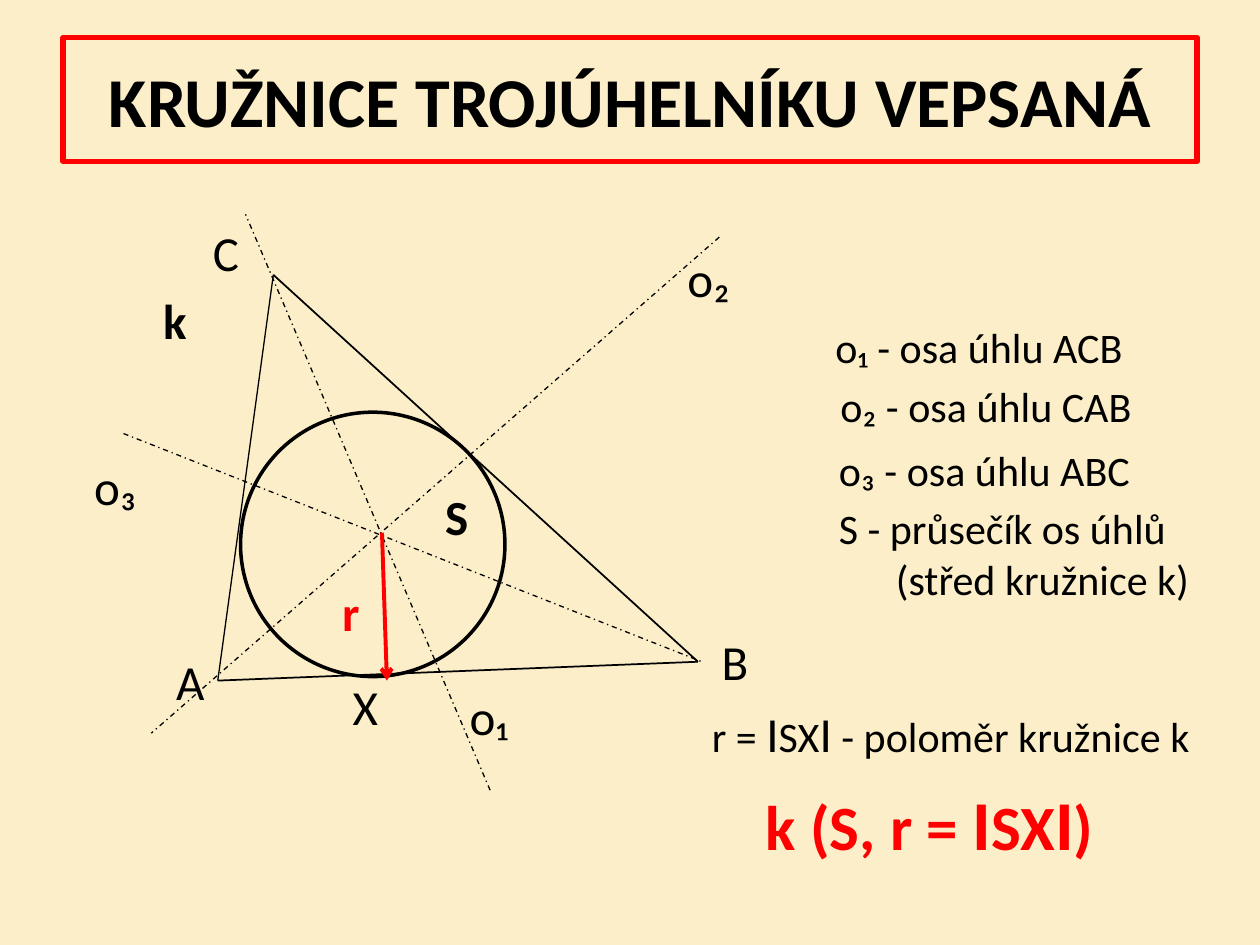
from dataclasses import dataclass

from lxml import etree
from pptx import Presentation
from pptx.dml.color import RGBColor
from pptx.enum.dml import MSO_LINE
from pptx.enum.shapes import MSO_CONNECTOR, MSO_SHAPE
from pptx.enum.text import MSO_ANCHOR, MSO_AUTO_SIZE, PP_ALIGN
from pptx.oxml.ns import qn
from pptx.util import Cm, Pt

STRAIGHT = MSO_CONNECTOR.STRAIGHT
OVAL = MSO_SHAPE.OVAL
DASH_DOT = MSO_LINE.DASH_DOT
CENTER = PP_ALIGN.CENTER
MIDDLE = MSO_ANCHOR.MIDDLE
FIT_SHAPE = MSO_AUTO_SIZE.SHAPE_TO_FIT_TEXT
TITLE_ONLY = 5


@dataclass(frozen=True)
class Theme:
    font: str = "Calibri"
    paper: RGBColor = RGBColor(0xFB, 0xEE, 0xC9)
    ink: RGBColor = RGBColor(0, 0, 0)
    accent: RGBColor = RGBColor(0xFF, 0, 0)
    title: int = 40
    label: int = 28
    legend: int = 24
    result: int = 36


theme = Theme()


def add_text(x, y, w, h, lines, color=theme.ink, bold=False):
    sp = slide.shapes.add_textbox(Cm(x), Cm(y), Cm(w), Cm(h))
    tf = sp.text_frame
    tf.word_wrap = False
    tf.auto_size = FIT_SHAPE
    for i, runs in enumerate(lines):
        p = tf.add_paragraph() if i else tf.paragraphs[0]
        for text, size in runs:
            r = p.add_run()
            r.text = text
            r.font.name = theme.font
            r.font.size = Pt(size)
            r.font.bold = bold
            r.font.color.rgb = color
    return tf


def add_line(start, end, width, color=theme.ink, dash=None):
    x1, y1 = start
    x2, y2 = end
    ln = slide.shapes.add_connector(STRAIGHT, Cm(x1), Cm(y1), Cm(x2), Cm(y2))
    ln.line.width = Pt(width)
    ln.line.color.rgb = color
    if dash:
        ln.line.dash_style = dash
    etree.SubElement(ln._element.spPr, qn("a:effectLst"))
    return ln


prs = Presentation()
prs.slide_width = Cm(25.4)
prs.slide_height = Cm(19.05)
slide = prs.slides.add_slide(prs.slide_layouts[TITLE_ONLY])
slide.background.fill.solid()
slide.background.fill.fore_color.rgb = theme.paper

title = slide.shapes.title
title.left, title.top, title.width, title.height = Cm(1.27), Cm(0.76), Cm(22.86), Cm(2.49)
title.line.color.rgb = theme.accent
title.line.width = Pt(3)
tf = title.text_frame
tf.text = "KRUŽNICE TROJÚHELNÍKU VEPSANÁ"
tf.vertical_anchor = MIDDLE
p = tf.paragraphs[0]
p.alignment = CENTER
font = p.runs[0].font
font.name = theme.font
font.size = Pt(theme.title)
font.bold = True
font.color.rgb = theme.ink

labels = [
    ("o₁", 9.22, 13.72, 1.3, False, theme.ink),
    ("o₂", 13.61, 4.88, 1.37, False, theme.ink),
    ("o₃", 1.65, 9.07, 1.37, False, theme.ink),
    ("S", 8.74, 9.68, 0.99, True, theme.ink),
    ("k", 3.05, 5.74, 0.99, True, theme.ink),
    ("A", 3.3, 13, 1.09, False, theme.ink),
    ("B", 14.3, 12.6, 1.07, False, theme.ink),
    ("C", 4.04, 4.37, 1.04, False, theme.ink),
    ("X", 6.86, 13.51, 1.04, False, theme.ink),
    ("r", 6.65, 11.61, 0.86, True, theme.accent),
]
for text, x, y, w, bold, color in labels:
    add_text(x, y, w, 1.45, [[(text, theme.label)]], color, bold)

A, B, C = (4.39, 13.72), (14.07, 13.34), (5.51, 5.54)
for start, end, width in [(A, B, 1), (C, A, 0.75), (C, B, 1)]:
    add_line(start, end, width)

circle = slide.shapes.add_shape(OVAL, Cm(4.85), Cm(8.31), Cm(5.33), Cm(5.33))
circle.shadow.inherit = False
circle.fill.background()
circle.line.color.rgb = theme.ink
circle.line.width = Pt(2)

bisectors = [
    ((14.5, 4.78), (3.05, 14.78)),
    ((2.49, 8.74), (14.15, 13.34)),
    ((9.88, 15.93), (4.95, 4.32)),
]
for start, end in bisectors:
    add_line(start, end, 0.75, dash=DASH_DOT)

radius = add_line((7.7, 10.74), (7.8, 13.72), 2.25, theme.accent)
etree.SubElement(radius.line._get_or_add_ln(), qn("a:tailEnd"), type="arrow")

legend = [
    ("o₁ - osa úhlu ACB", 16.59, 6.35),
    ("o₂ - osa úhlu CAB", 16.69, 7.54),
    ("o₃ - osa úhlu ABC", 16.66, 8.84),
]
for text, x, y in legend:
    add_text(x, y, 6.4, 1.27, [[(text, theme.legend)]])

center = add_text(16.66, 10.01, 7.62, 2.31, [
    [("S - průsečík os úhlů", theme.legend)],
    [("(střed kružnice k)", theme.legend)],
])
center.paragraphs[1]._p.get_or_add_pPr().set("marL", str(Cm(1.15)))

add_text(14.1, 14.05, 10.41, 1.45, [[
    ("r = ", theme.legend), ("I", theme.label), ("SX", theme.legend),
    ("I", theme.label), (" - poloměr kružnice k", theme.legend),
]])
add_text(15.19, 15.62, 7.47, 1.96, [[
    ("k (S, r = ", theme.result), ("I", theme.title), ("SX", theme.result),
    ("I", theme.title), (")", theme.result),
]], theme.accent, True)

prs.save("out.pptx")
